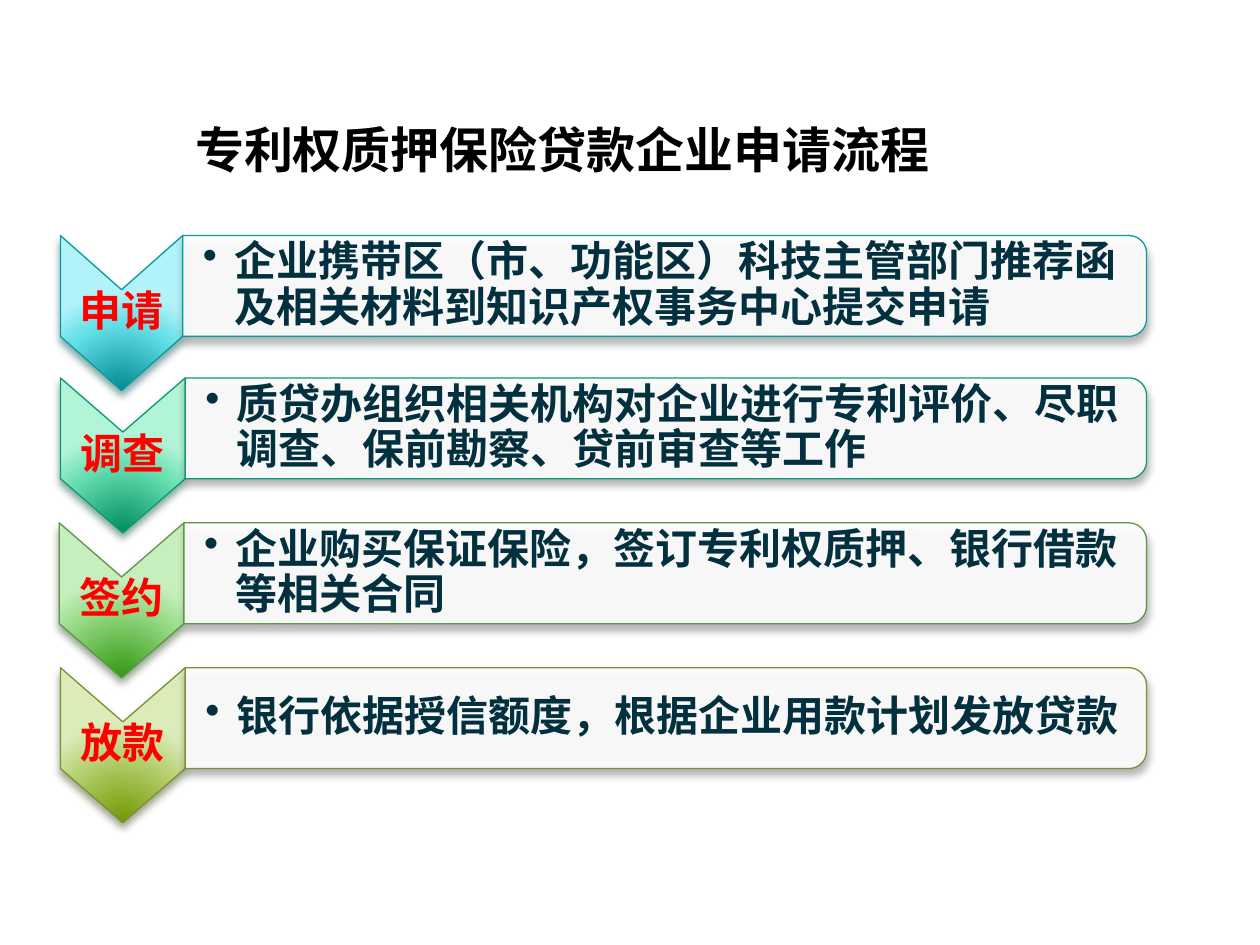
from math import cos, pi, sin

from pptx import Presentation
from pptx.dml.color import RGBColor
from pptx.enum.text import MSO_ANCHOR, MSO_AUTO_SIZE, PP_ALIGN
from pptx.oxml import parse_xml
from pptx.oxml.ns import nsdecls, qn
from pptx.util import Inches, Pt

FONT = "Noto Sans CJK SC"
TITLE = "专利权质押保险贷款企业申请流程"
STEPS = [
    {"name": "申请", "text": "企业携带区（市、功能区）科技主管部门推荐函及相关材料到知识产权事务中心提交申请",
     "left": 0.48, "split": 1.45, "top": 1.87, "line": "069CA3", "shadow": "024B4E",
     "stops": ("008A91", "64DFE7", "B1F3F9")},
    {"name": "调查", "text": "质贷办组织相关机构对企业进行专利评价、尽职调查、保前勘察、贷前审查等工作",
     "left": 0.48, "split": 1.47, "top": 3, "line": "0A9B74", "shadow": "044A37",
     "stops": ("008C60", "65DEB0", "B2F4D6")},
    {"name": "签约", "text": "企业购买保证保险，签订专利权质押、银行借款等相关合同",
     "left": 0.47, "split": 1.46, "top": 4.15, "line": "5B9747", "shadow": "2B4821",
     "stops": ("319811", "95D882", "C6EFBD")},
    {"name": "放款", "text": "银行依据授信额度，根据企业用款计划发放贷款",
     "left": 0.48, "split": 1.47, "top": 5.3, "line": "7B9135", "shadow": "3A4519",
     "stops": ("729800", "B8D275", "DBECB9")},
]
RIGHT, BODY_H, NOTCH, RADIUS = 9.1, 0.8, 0.43, 0.14
CHEVRON_FRAME = {"margin_left": Inches(0.01), "margin_right": Inches(0.01),
                 "margin_top": Inches(0.42), "margin_bottom": Inches(0.42)}
BODY_FRAME = {"margin_left": Inches(0.16), "margin_right": Inches(0.05),
              "margin_top": Inches(0.05), "margin_bottom": Inches(0.05)}


def rgb(value):
    """Turn a hex string into a colour."""
    return RGBColor.from_string(value)


def apply(obj, formats):
    """Set each attribute named in a dict."""
    for name, value in formats.items():
        setattr(obj, name, value)


def write(p, text, size, color):
    """Add one bold run in the slide font."""
    r = p.add_run()
    r.text = text
    r.font.color.rgb = rgb(color)
    apply(r.font, {"size": Pt(size), "bold": True, "name": FONT})
    r.font._element.append(parse_xml(f'<a:ea {nsdecls("a")} typeface="{FONT}"/>'))


def radial_fill(stops):
    """Return a circular gradient centred below the shape."""
    marks = "".join(f'<a:gs pos="{pos}"><a:srgbClr val="{color}"/></a:gs>'
                    for pos, color in zip((0, 68000, 100000), stops))
    return (f'<a:gradFill {nsdecls("a")} rotWithShape="1"><a:gsLst>{marks}</a:gsLst>'
            '<a:path path="circle"><a:fillToRect l="50000" t="130000" r="50000" b="-30000"/>'
            '</a:path></a:gradFill>')


def clear_fill():
    """Return a slightly transparent white fill."""
    return (f'<a:solidFill {nsdecls("a")}><a:srgbClr val="FFFFFF">'
            '<a:alpha val="90000"/></a:srgbClr></a:solidFill>')


def add_outline(s, points, fill, line, shadow, frame):
    """Draw a closed outline and return its empty paragraph."""
    points = [(Inches(x), Inches(y)) for x, y in points]
    builder = s.shapes.build_freeform(*points[0])
    builder.add_line_segments(points[1:], close=True)
    sp = builder.convert_to_shape()
    props = sp._element.spPr
    props.append(parse_xml(fill))
    sp.line.color.rgb = rgb(line)
    sp.line.width = Pt(0.75)
    sp.shadow.inherit = False
    props.find(qn("a:effectLst")).append(parse_xml(
        f'<a:outerShdw {nsdecls("a")} blurRad="{Pt(4.5)}" dist="{Pt(3)}" dir="5400000" '
        f'rotWithShape="0"><a:srgbClr val="{shadow}"><a:alpha val="48000"/></a:srgbClr>'
        '</a:outerShdw>'))
    tf = sp.text_frame
    apply(tf, {"word_wrap": True, "vertical_anchor": MSO_ANCHOR.MIDDLE, **frame})
    p = tf.paragraphs[0]
    p.line_spacing = 0.9
    return p


def add_step(s, step):
    """Draw a chevron and the rounded panel beside it."""
    left, split, top = step["left"], step["split"], step["top"]
    bottom, middle = top + BODY_H, (left + split) / 2
    chevron = [(split, top), (split, bottom), (middle, bottom + NOTCH),
               (left, bottom), (left, top), (middle, top + NOTCH)]
    p = add_outline(s, chevron, radial_fill(step["stops"]), step["line"],
                    step["shadow"], CHEVRON_FRAME)
    p.alignment = PP_ALIGN.CENTER
    write(p, step["name"], 24, "FF0000")

    angles = [i * pi / 24 for i in range(13)]
    x = RIGHT - RADIUS
    panel = [(split, top)]
    panel += [(x + RADIUS * sin(a), top + RADIUS * (1 - cos(a))) for a in angles]
    panel += [(x + RADIUS * cos(a), bottom - RADIUS * (1 - sin(a))) for a in angles]
    panel.append((split, bottom))
    p = add_outline(s, panel, clear_fill(), step["line"], "5A5A5A", BODY_FRAME)
    p.alignment = PP_ALIGN.LEFT
    props = p._p.get_or_add_pPr()
    props.set("marL", str(Inches(0.25)))
    props.set("indent", str(Inches(-0.25)))
    props.append(parse_xml(f'<a:buChar {nsdecls("a")} char="•"/>'))
    write(p, step["text"], 24, "02303E")


def main():
    """Build and save the slide."""
    prs = Presentation()
    prs.slide_width, prs.slide_height = Inches(10), Inches(7.5)
    s = prs.slides.add_slide(prs.slide_layouts[6])
    for step in STEPS:
        add_step(s, step)
    box = s.shapes.add_textbox(Inches(1.45), Inches(0.9), Inches(6.12), Inches(0.57))
    tf = box.text_frame
    apply(tf, {"word_wrap": False, "auto_size": MSO_AUTO_SIZE.SHAPE_TO_FIT_TEXT})
    write(tf.paragraphs[0], TITLE, 28, "000000")
    prs.save("out.pptx")


if __name__ == "__main__":
    main()
